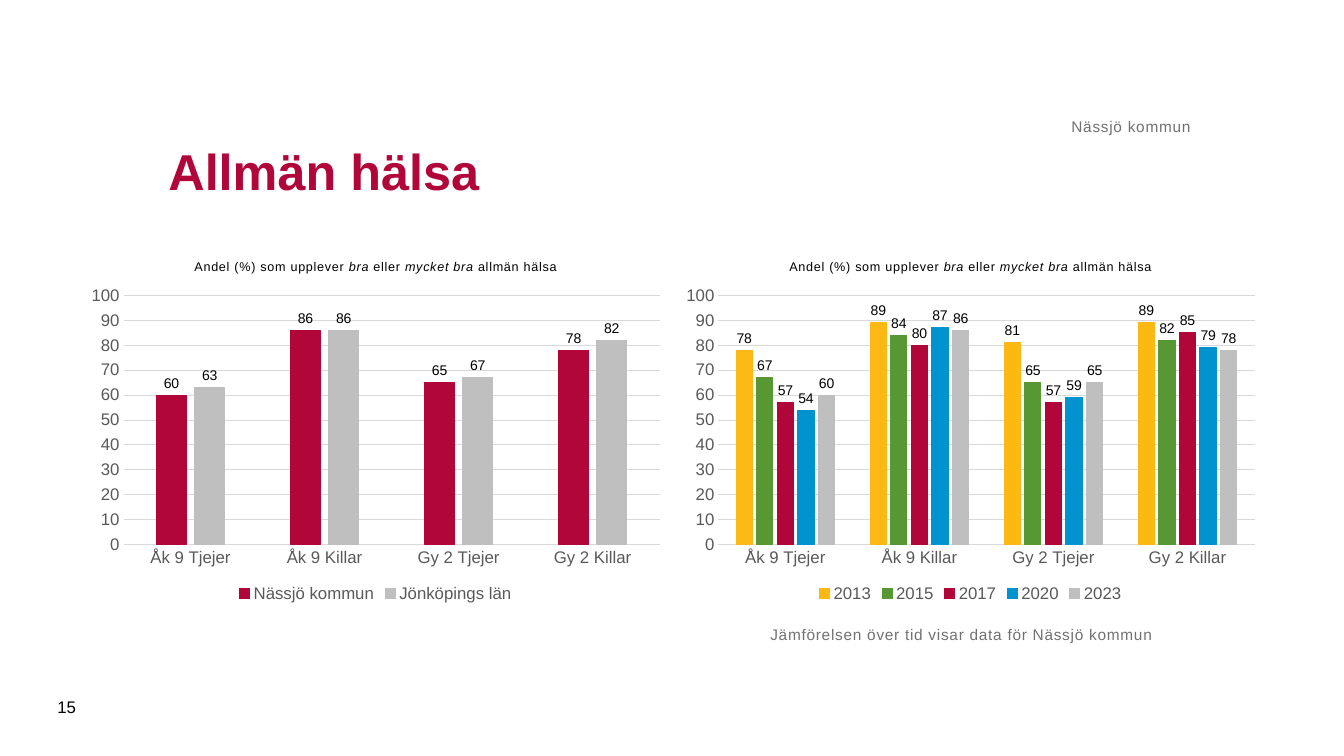
from pptx import Presentation
from pptx.chart.data import CategoryChartData
from pptx.dml.color import RGBColor
from pptx.enum.chart import XL_CHART_TYPE, XL_LABEL_POSITION, XL_LEGEND_POSITION, XL_TICK_MARK
from pptx.enum.text import MSO_ANCHOR, PP_ALIGN
from pptx.util import Inches, Pt

RED, GREY, DARK, SOFT, RULE = "B1063A", "BFBFBF", "595959", "717171", "D9D9D9"
BLACK = "000000"
FORM = "#,##0;#,##0"
GROUPS = ["Åk 9 Tjejer", "Åk 9 Killar", "Gy 2 Tjejer", "Gy 2 Killar"]
REGION = [
    ("Nässjö kommun", (60, 86, 65, 78), RED),
    ("Jönköpings län", (63, 86, 67, 82), GREY),
]
YEARS = [
    ("2013", (78, 89, 81, 89), "FDB913"),
    ("2015", (67, 84, 65, 82), "579835"),
    ("2017", (57, 80, 57, 85), RED),
    ("2020", (54, 87, 59, 79), "0093D0"),
    ("2023", (60, 86, 65, 78), GREY),
]
HEAD = [("Andel (%) som upplever ", False), ("bra", True), (" eller ", False),
        ("mycket bra", True), (" allmän hälsa", False)]


def paint(code):
    """Turn a hex string into a colour."""
    return RGBColor.from_string(code)


def style(font, size, color, bold=False, italic=False):
    """Set the look of a font."""
    font.name, font.size = "Arial", Pt(size)
    font.bold, font.italic = bold, italic
    font.color.rgb = paint(color)


def write(para, text, size=11, color=SOFT, track=0, **look):
    """Add formatted text to a paragraph."""
    run = para.add_run()
    run.text = text
    style(run.font, size, color, **look)
    if track:
        run._r.get_or_add_rPr().set("spc", str(int(track * 100)))


def rule(line, color):
    """Draw a thin line in one colour."""
    line.color.rgb = paint(color)
    line.width = Pt(0.75)


class Page:
    """Holds the slide and draws its elements."""

    def __init__(self, deck):
        """Add a title-only slide."""
        self.slide = deck.slides.add_slide(deck.slide_layouts[5])

    def title(self, text, box):
        """Place and fill the title."""
        shape = self.slide.shapes.title
        shape.left, shape.top, shape.width, shape.height = map(Inches, box)
        frame = shape.text_frame
        frame.vertical_anchor = MSO_ANCHOR.MIDDLE
        frame.paragraphs[0].alignment = PP_ALIGN.LEFT
        write(frame.paragraphs[0], text, size=36, color=RED, bold=True)

    def text(self, text, box, anchor=MSO_ANCHOR.TOP, align=PP_ALIGN.LEFT, inset=0, **look):
        """Add a text box."""
        frame = self.slide.shapes.add_textbox(*map(Inches, box)).text_frame
        frame.word_wrap = True
        frame.vertical_anchor = anchor
        frame.margin_left = frame.margin_right = Inches(inset)
        frame.margin_top = frame.margin_bottom = Inches(inset / 2)
        frame.paragraphs[0].alignment = align
        write(frame.paragraphs[0], text, **look)

    def chart(self, rows, box):
        """Add a column chart with labels."""
        data = CategoryChartData(number_format="0")
        data.categories = GROUPS
        for name, vals, _ in rows:
            data.add_series(name, vals)
        kind = XL_CHART_TYPE.COLUMN_CLUSTERED
        chart = self.slide.shapes.add_chart(kind, *map(Inches, box), data).chart
        style(chart.font, 10, BLACK)
        for text, slant in HEAD:
            write(chart.chart_title.text_frame.paragraphs[0], text,
                  size=9, color=BLACK, track=0.5, italic=slant)
        chart.chart_title.include_in_layout = False
        chart.has_legend = True
        chart.legend.position = XL_LEGEND_POSITION.BOTTOM
        chart.legend.include_in_layout = False
        style(chart.legend.font, 12, DARK)
        self.axes(chart)
        self.bars(chart.plots[0], rows)

    def axes(self, chart):
        """Format both axes of a chart."""
        for axis in (chart.category_axis, chart.value_axis):
            axis.major_tick_mark = axis.minor_tick_mark = XL_TICK_MARK.NONE
            style(axis.tick_labels.font, 12, DARK)
        rule(chart.category_axis.format.line, RULE)
        axis = chart.value_axis
        axis.minimum_scale, axis.maximum_scale, axis.major_unit = 0, 100, 10
        axis.tick_labels.number_format = FORM
        axis.tick_labels.number_format_is_linked = False
        axis.format.line.fill.background()
        rule(axis.major_gridlines.format.line, RULE)

    def bars(self, plot, rows):
        """Colour and label the columns."""
        plot.gap_width, plot.overlap = 219, -27
        plot.vary_by_categories = False
        for bar, (_, _, color) in zip(plot.series, rows):
            bar.format.fill.solid()
            bar.format.fill.fore_color.rgb = paint(color)
            rule(bar.format.line, color)
            tags = bar.data_labels
            tags.show_value = True
            tags.position = XL_LABEL_POSITION.OUTSIDE_END
            tags.number_format = FORM
            tags.number_format_is_linked = False
            style(tags.font, 10, BLACK)


def main():
    """Build the slide and save it."""
    deck = Presentation()
    deck.slide_width, deck.slide_height = Inches(13.33), Inches(7.5)
    page = Page(deck)
    for left, rows in ((0.79, REGION), (6.69, YEARS)):
        page.chart(rows, (left, 2.4, 5.87, 3.62))
    page.title("Allmän hälsa", (1.57, 0.98, 10.24, 1.42))
    page.text("Jämförelsen över tid visar data för Nässjö kommun",
              (7.64, 6.2, 5.31, 0.94), track=0.5)
    page.text("Nässjö kommun", (1.57, 0.62, 10.24, 0.73),
              anchor=MSO_ANCHOR.BOTTOM, align=PP_ALIGN.RIGHT, track=0.5)
    page.text("15", (0.47, 6.81, 0.57, 0.4), anchor=MSO_ANCHOR.MIDDLE,
              inset=0.1, size=12, color=BLACK)
    deck.save("out.pptx")


if __name__ == "__main__":
    main()
